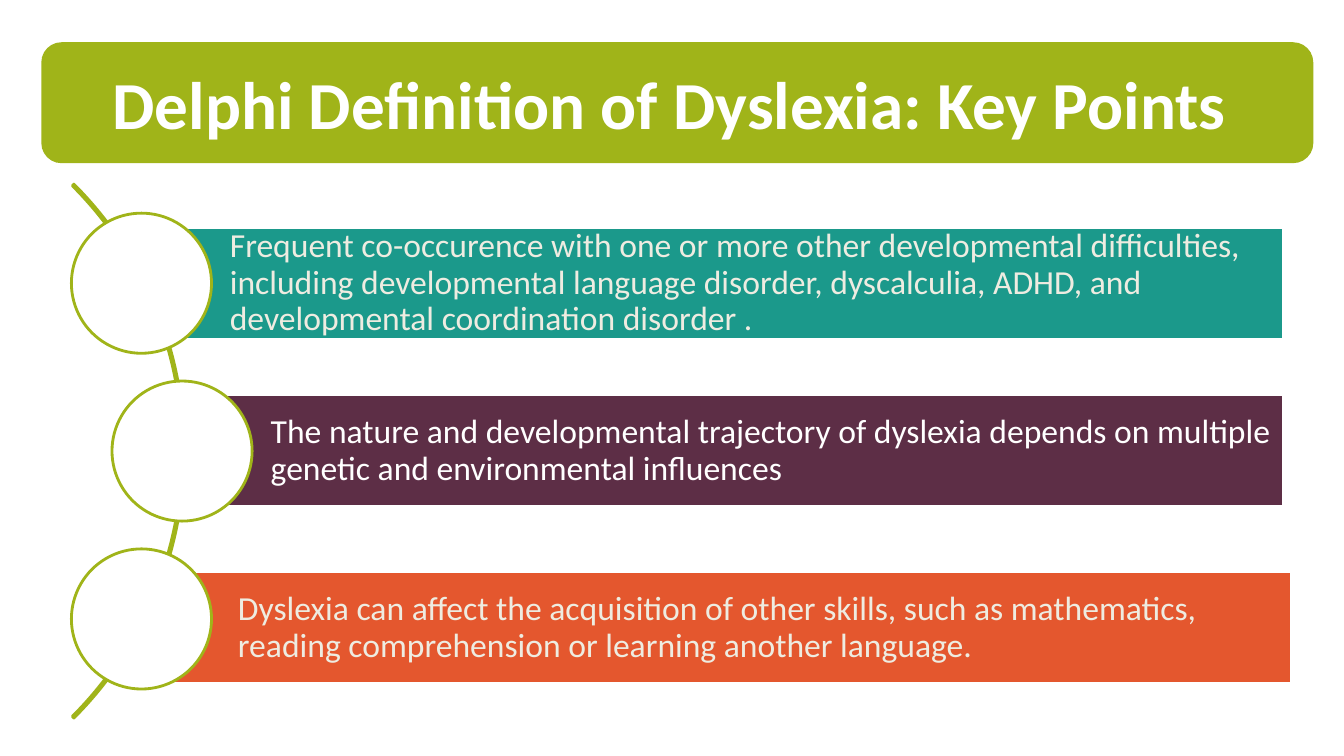
from dataclasses import dataclass

from pptx import Presentation
from pptx.dml.color import RGBColor
from pptx.enum.shapes import MSO_SHAPE as Shape
from pptx.enum.text import MSO_ANCHOR as Anchor, PP_ALIGN as Align
from pptx.util import Pt


@dataclass(frozen=True)
class Theme:
    font: str = "Calibri"
    title_size: int = 48
    body_size: int = 24
    line_width: int = 2
    green: str = "A0B419"
    teal: str = "1B998B"
    plum: str = "5D2E46"
    orange: str = "E4572E"
    white: str = "FFFFFF"
    cream: str = "EEECE1"


THEME = Theme()

# Layout, in points
CENTRE_Y = 322.2
PITCH = 119.9
CIRCLE = 100.1
ARC = 539.3
BAR_HEIGHT = 79.9

# Bar left, bar top, bar width, circle left, fill, text colour, text
KEY_POINTS = [
    (100.8, 162.4, 815.8, 51, THEME.teal, THEME.cream,
     "Frequent co-occurence with one or more other developmental difficulties, "
     "including developmental language disorder, dyscalculia, ADHD, and "
     "developmental coordination disorder ."),
    (130, 282.2, 786.6, 80, THEME.plum, THEME.white,
     "The nature and developmental trajectory of dyslexia depends on multiple "
     "genetic and environmental influences"),
    (106.6, 408.6, 815.8, 51, THEME.orange, THEME.cream,
     "Dyslexia can affect the acquisition of other skills, such as mathematics, "
     "reading comprehension or learning another language."),
]


def add_box(s, kind, left, top, width, height, fill=None, line=None):
    sp = s.shapes.add_shape(kind, Pt(left), Pt(top), Pt(width), Pt(height))
    sp.shadow.inherit = False
    if fill:
        sp.fill.solid()
        sp.fill.fore_color.rgb = RGBColor.from_string(fill)
    else:
        sp.fill.background()
    if line:
        sp.line.color.rgb = RGBColor.from_string(line)
        sp.line.width = Pt(THEME.line_width)
    else:
        sp.line.fill.background()
    return sp


def add_text(sp, text, size, color, align, bold=False):
    tf = sp.text_frame
    tf.word_wrap = True
    tf.vertical_anchor = Anchor.MIDDLE
    p = tf.paragraphs[0]
    p.alignment = align
    r = p.add_run()
    r.text = text
    r.font.name = THEME.font
    r.font.size = Pt(size)
    r.font.bold = bold
    r.font.color.rgb = RGBColor.from_string(color)
    return tf


def add_title(s, text):
    sp = add_box(s, Shape.ROUNDED_RECTANGLE, 29.5, 30.2, 908.6, 86.4, THEME.green)
    add_text(sp, text, THEME.title_size, THEME.white, Align.CENTER, bold=True)


def add_arc(s):
    sp = add_box(s, Shape.BLOCK_ARC, -407.5, CENTRE_Y - ARC / 2, ARC, ARC,
                 line=THEME.green)
    for i, value in enumerate((189, 27, 0.003)):
        sp.adjustments[i] = value


def add_bar(s, left, top, width, fill, color, text):
    sp = add_box(s, Shape.RECTANGLE, left, top, width, BAR_HEIGHT, fill, THEME.white)
    tf = add_text(sp, text, THEME.body_size, color, Align.LEFT)
    tf.margin_left = Pt(63.4)
    tf.margin_top = tf.margin_right = tf.margin_bottom = Pt(4.8)
    tf.paragraphs[0].line_spacing = 0.9


def add_circle(s, left, centre_y):
    add_box(s, Shape.OVAL, left, centre_y - CIRCLE / 2, CIRCLE, CIRCLE,
            THEME.white, THEME.green)


def main():
    prs = Presentation()
    prs.slide_width, prs.slide_height = Pt(960), Pt(540)
    s = prs.slides.add_slide(prs.slide_layouts[6])

    # Heading
    add_title(s, "Delphi Definition of Dyslexia: Key Points ")

    # Key points strung along the arc
    add_arc(s)
    for i, (left, top, width, circle_left, fill, color, text) in enumerate(KEY_POINTS):
        add_bar(s, left, top, width, fill, color, text)
        add_circle(s, circle_left, CENTRE_Y + (i - 1) * PITCH)

    prs.save("out.pptx")


if __name__ == "__main__":
    main()
